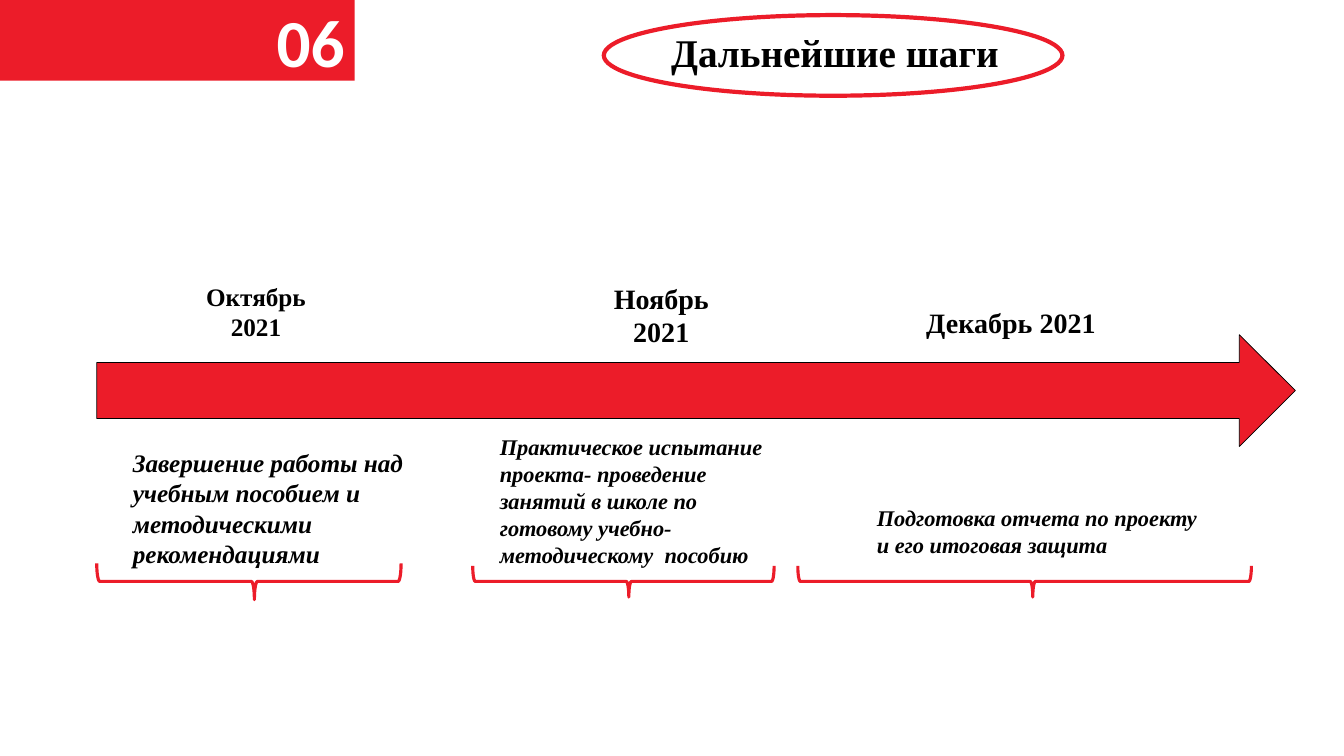
from pptx import Presentation
from pptx.dml.color import RGBColor
from pptx.enum.shapes import MSO_SHAPE as Shape
from pptx.enum.text import MSO_ANCHOR as Anchor, MSO_AUTO_SIZE as AutoSize, PP_ALIGN as Align
from pptx.util import Pt

COLORS = {"red": "EC1C29", "black": "000000", "white": "FFFFFF"}
SERIF = "Times New Roman"


class StepsSlide:
    """Holds the style and the slide, and draws each kind of element."""

    def __init__(self, slide):
        self.shapes = slide.shapes

    def color(self, name):
        return RGBColor.from_string(COLORS[name])

    def shape(self, kind, box, fill=None, line=None, width=1):
        item = self.shapes.add_shape(kind, *map(Pt, box))
        item.shadow.inherit = False
        if fill:
            item.fill.solid()
            item.fill.fore_color.rgb = self.color(fill)
        else:
            item.fill.background()
        if line:
            item.line.color.rgb = self.color(line)
            item.line.width = Pt(width)
        else:
            item.line.fill.background()
        return item

    def put_words(self, frame, words, align, color="black", **font):
        paragraph = frame.paragraphs[0]
        paragraph.alignment = align
        run = paragraph.add_run()
        run.text = words
        run.font.color.rgb = self.color(color)
        for key, value in {"name": SERIF, "bold": True, **font}.items():
            setattr(run.font, key, value)

    def text(self, box, words, size, align=Align.LEFT, wrap=True, italic=False):
        frame = self.shapes.add_textbox(*map(Pt, box)).text_frame
        for key, value in {"word_wrap": wrap, "auto_size": AutoSize.SHAPE_TO_FIT_TEXT}.items():
            setattr(frame, key, value)
        self.put_words(frame, words, align, size=Pt(size), italic=italic)

    def brace(self, center, span, depth):
        box = (center - depth / 2, 415.3 - span / 2, depth, span)
        brace = self.shape(Shape.LEFT_BRACE, box, line="red", width=2.25)
        brace.rotation = 270
        for index, ratio in enumerate((0.083, 0.518)):
            brace.adjustments[index] = ratio

    def number(self, box, words):
        frame = self.shape(Shape.RECTANGLE, box, fill="red").text_frame
        frame.vertical_anchor = Anchor.MIDDLE
        self.put_words(frame, words, Align.RIGHT, "white", name="Calibri", size=Pt(48))


STEPS = [
    {"month": ((123.1, 197.3, 119.5, 51), "Октябрь 2021", 18),
     "task": ((87.8, 316.1, 236.2, 94.3),
              "Завершение работы над учебным пособием и методическими рекомендациями", 18),
     "brace": (177.8, 217.4, 25.9)},
    {"month": ((412.6, 197.3, 119.5, 55.4), "Ноябрь 2021", 20),
     "task": ((349.9, 306, 215.3, 123.8),
              "Практическое испытание проекта- проведение занятий в школе по готовому "
              "учебно-методическому  пособию", 16),
     "brace": (445.3, 215.3, 22.3)},
    {"month": ((634.3, 214.6, 175.7, 31.7), "Декабрь 2021", 20),
     "task": ((619.2, 356.4, 252.7, 46.1),
              "Подготовка отчета по проекту и его итоговая защита", 16),
     "brace": (731.9, 324, 22.3)},
]


def main():
    deck = Presentation()
    deck.slide_width, deck.slide_height = Pt(960), Pt(540)
    page = StepsSlide(deck.slides.add_slide(deck.slide_layouts[6]))

    page.number((0, 0, 253.4, 57.6), "06")
    page.text((472.3, 16.6, 251.3, 41), "Дальнейшие шаги", 28, wrap=False)
    page.shape(Shape.OVAL, (431.3, 10.8, 327.6, 57.6), line="red", width=3)
    page.shape(Shape.RIGHT_ARROW, (69.1, 239, 856.1, 79.9), fill="red", line="black", width=0.5)
    for step in STEPS:
        page.text(*step["month"], align=Align.CENTER)
        page.brace(*step["brace"])
        page.text(*step["task"], italic=True)

    deck.save("out.pptx")


if __name__ == "__main__":
    main()
